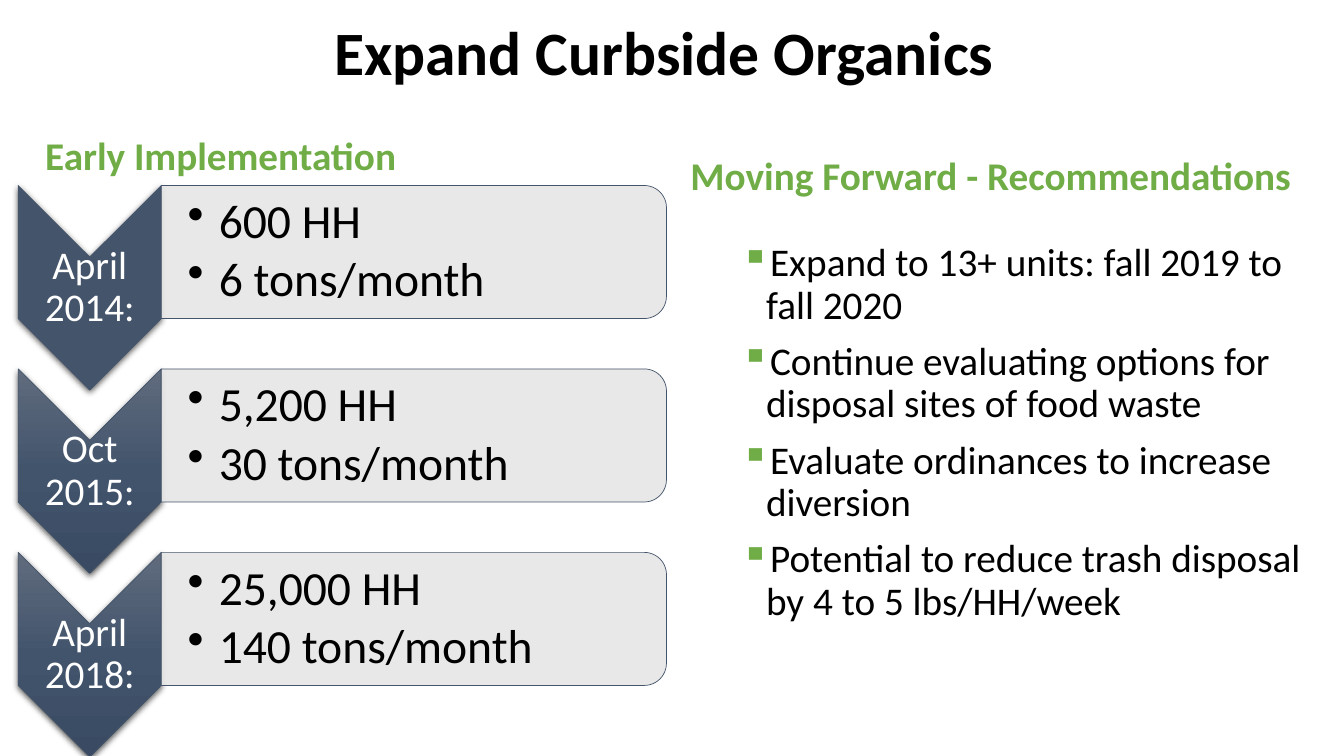
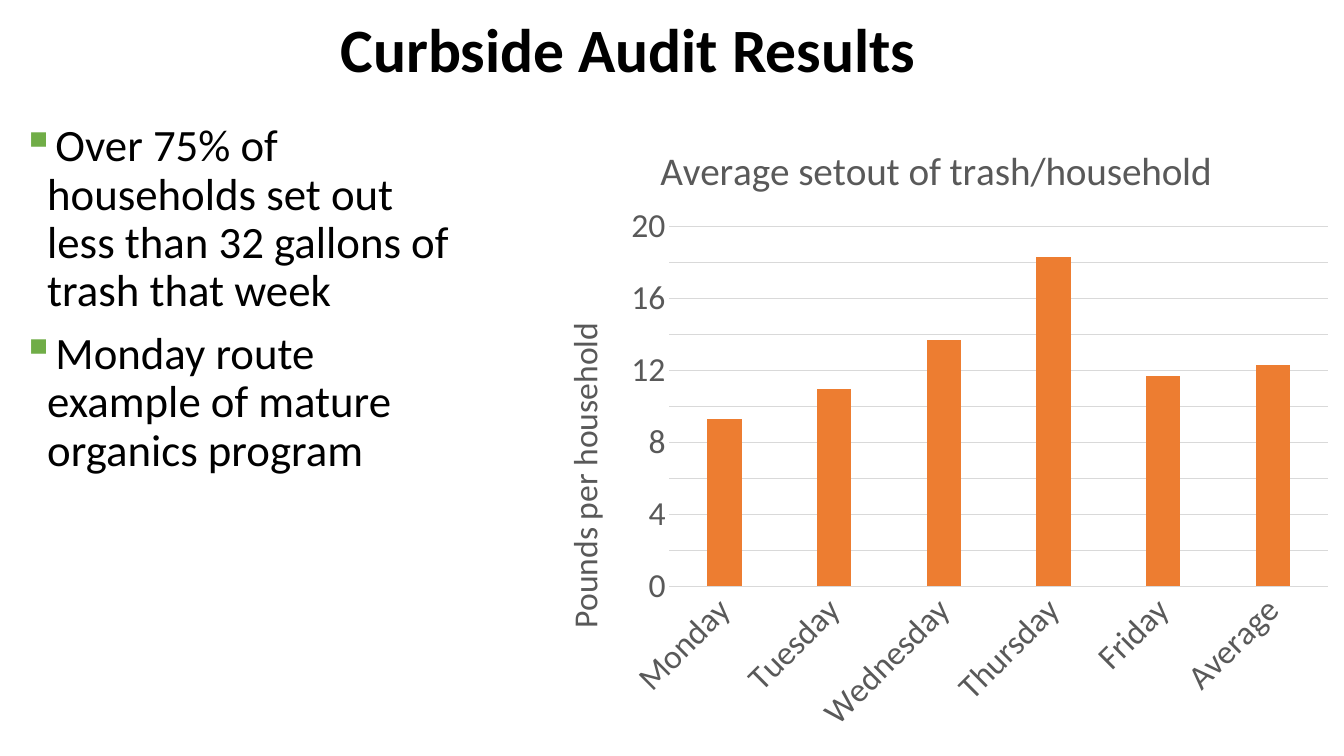
import pptx
import pptx.chart.data
import pptx.dml.color
import pptx.enum.chart
import pptx.enum.shapes
import pptx.enum.text
import pptx.oxml
import pptx.oxml.ns
import pptx.util

PX = 9144
FONT = "Calibri"
RGB = pptx.dml.color.RGBColor
BLACK = RGB(0x00, 0x00, 0x00)
WHITE = RGB(0xFF, 0xFF, 0xFF)
GREEN = RGB(0x70, 0xAD, 0x47)
SLATE = RGB(0x44, 0x54, 0x6A)
SILVER = RGB(0xE7, 0xE6, 0xE6)
GREY = RGB(0x59, 0x59, 0x59)
RULE = RGB(0xD9, 0xD9, 0xD9)
ORANGE = RGB(0xED, 0x7D, 0x31)
SLATE_BLEND = ((0, RGB(0x60, 0x6B, 0x7D)), (50, RGB(0x42, 0x54, 0x6C)),
               (100, RGB(0x39, 0x4A, 0x62)))

ALIGN = pptx.enum.text.PP_ALIGN
ANCHOR = pptx.enum.text.MSO_ANCHOR
SHAPE = pptx.enum.shapes.MSO_SHAPE
CHART = pptx.enum.chart
INSETS = ("margin_left", "margin_top", "margin_right", "margin_bottom")

TITLE = {"size": 44, "bold": True, "color": BLACK}
HEADING = {"size": 28, "bold": True, "color": GREEN}
CENTRED = {"alignment": ALIGN.CENTER, "line_spacing": 0.9}
LISTED = {"line_spacing": 0.9, "space_before": pptx.util.Pt(10)}
STEP_LISTED = {"line_spacing": 0.9, "space_after": pptx.util.Pt(5)}


def px(n):
    return pptx.util.Emu(int(n * PX))


def xml(text):
    return pptx.oxml.parse_xml(text)


def ns(*prefixes):
    return pptx.oxml.ns.nsdecls(*prefixes)


def assign(obj, values):
    for name, value in values.items():
        setattr(obj, name, value)


def style_font(font, size, color, bold=False):
    assign(font, {"name": FONT, "size": pptx.util.Pt(size), "bold": bold})
    font.color.rgb = color


def add_bullet(p, char, indent, color):
    pPr = p._p.get_or_add_pPr()
    assign_indent = {"marL": px(indent), "indent": -px(indent)}
    for name, value in assign_indent.items():
        pPr.set(name, str(int(value)))
    pPr.append(xml(f'<a:buClr {ns("a")}><a:srgbClr val="{color}"/></a:buClr>'))
    pPr.append(xml(f'<a:buChar {ns("a")} char="{char}"/>'))


def add_text(s, box, lines, font, para=None, anchor=ANCHOR.TOP,
             insets=(10, 5, 10, 5), bullet=None):
    tf = s.shapes.add_textbox(*map(px, box)).text_frame
    assign(tf, {"word_wrap": True, "vertical_anchor": anchor})
    assign(tf, dict(zip(INSETS, map(px, insets))))
    for i, line in enumerate(lines):
        p = tf.paragraphs[0] if i == 0 else tf.add_paragraph()
        assign(p, para or {})
        r = p.add_run()
        r.text = line
        style_font(r.font, **font)
        if bullet:
            add_bullet(p, *bullet)


def add_title(s, box, text):
    add_text(s, box, [text], TITLE, CENTRED, ANCHOR.MIDDLE)


def add_list(s, box, lines, size):
    add_text(s, box, lines, {"size": size, "color": BLACK}, LISTED,
             bullet=("▪", 25, GREEN))


def add_turned(s, kind, box, fill):
    x, y, w, h = box
    sp = s.shapes.add_shape(kind, px(x + (w - h) / 2), px(y + (h - w) / 2),
                            px(h), px(w))
    sp.rotation = 90
    sp.shadow.inherit = False
    sp.fill.solid()
    sp.fill.fore_color.rgb = fill
    sp.line.color.rgb = SLATE
    sp.line.width = pptx.util.Pt(0.5)
    return sp


def set_gradient(sp, stops):
    gs = "".join(f'<a:gs pos="{pos * 1000}"><a:srgbClr val="{color}"/></a:gs>'
                 for pos, color in stops)
    solid = sp._element.spPr.find(pptx.oxml.ns.qn("a:solidFill"))
    solid.getparent().replace(solid, xml(
        f'<a:gradFill {ns("a")} rotWithShape="0"><a:gsLst>{gs}</a:gsLst>'
        '<a:lin ang="5400000" scaled="0"/></a:gradFill>'))


def set_shadow(sp):
    sp._element.spPr.find(pptx.oxml.ns.qn("a:effectLst")).append(xml(
        f'<a:outerShdw {ns("a")} blurRad="57150" dist="19050" dir="5400000" '
        'algn="ctr" rotWithShape="0"><a:srgbClr val="000000">'
        '<a:alpha val="63000"/></a:srgbClr></a:outerShdw>'))


def add_step(s, box, date, facts, blended):
    x, y, w, h = box
    arrow_w, panel_h = 142, 132
    chevron = add_turned(s, SHAPE.CHEVRON, (x, y, arrow_w, h), SLATE)
    if blended:
        set_gradient(chevron, SLATE_BLEND)
    set_shadow(chevron)
    add_text(s, (x, y + 71, arrow_w, 61), [date], {"size": 28, "color": WHITE},
             CENTRED, ANCHOR.MIDDLE, (2, 2, 2, 2))
    panel_box = (x + arrow_w, y, w - arrow_w, panel_h)
    panel = add_turned(s, SHAPE.ROUND_2_SAME_RECTANGLE, panel_box, SILVER)
    color = panel.fill._xPr.find(".//" + pptx.oxml.ns.qn("a:srgbClr"))
    color.append(xml(f'<a:alpha {ns("a")} val="90000"/>'))
    add_text(s, panel_box, facts, {"size": 34, "color": BLACK}, STEP_LISTED,
             ANCHOR.MIDDLE, (26, 2, 2, 2), ("•", 31, BLACK))


def add_timeline(s, box, steps):
    x, y, w, h = box
    for i, (date, facts) in enumerate(steps):
        add_step(s, (x, y + 182 * i, w, h), date, facts, i > 0)


def set_layout(element, place, inner=False):
    for old in element.findall(pptx.oxml.ns.qn("c:layout")):
        element.remove(old)
    target = '<c:layoutTarget val="inner"/>' if inner else ""
    modes = "".join(f'<c:{k}Mode val="edge"/>' for k in "xy")
    values = "".join(f'<c:{k} val="{v}"/>' for k, v in zip("xywh", place))
    layout = xml(f'<c:layout {ns("c")}><c:manualLayout>{target}{modes}{values}'
                 '</c:manualLayout></c:layout>')
    text = element.find(pptx.oxml.ns.qn("c:tx"))
    if text is None:
        element.insert(0, layout)
    else:
        text.addnext(layout)


def add_chart_title(owner, text, size, place):
    title = owner.chart_title if hasattr(owner, "chart_title") else owner.axis_title
    p = title.text_frame.paragraphs[0]
    r = p.add_run()
    r.text = text
    style_font(r.font, size, GREY)
    set_layout(title._element, place)


def add_setout_chart(s, box, cats, vals):
    data = pptx.chart.data.CategoryChartData()
    data.categories = cats
    data.add_series("Series 1", vals)
    chart = s.shapes.add_chart(CHART.XL_CHART_TYPE.COLUMN_CLUSTERED,
                               *map(px, box), data).chart
    chart.has_legend = False
    style_font(chart.font, 24, GREY)
    add_chart_title(chart, "Average setout of trash/household", 28, (0.15, 0.05))
    plot = chart.plots[0]
    assign(plot, {"gap_width": 219, "overlap": -27, "vary_by_categories": False})
    fill = plot.series[0].format.fill
    fill.solid()
    fill.fore_color.rgb = ORANGE
    for axis in (chart.category_axis, chart.value_axis):
        assign(axis, {"major_tick_mark": CHART.XL_TICK_MARK.NONE,
                      "minor_tick_mark": CHART.XL_TICK_MARK.NONE})
        style_font(axis.tick_labels.font, 24, GREY)
    cat, val = chart.category_axis, chart.value_axis
    cat._element.txPr.bodyPr.set("rot", "-2700000")
    assign(val, {"minimum_scale": 0, "maximum_scale": 20, "major_unit": 2})
    assign(val.tick_labels, {"number_format": "0", "number_format_is_linked": False})
    val.format.line.fill.background()
    for line in (cat.format.line, val.major_gridlines.format.line):
        line.color.rgb = RULE
        line.width = pptx.util.Pt(0.75)
    add_chart_title(val, "Pounds per household", 24, (0.03, 0.33))
    val.axis_title.text_frame._txBody.bodyPr.set("rot", "-5400000")
    plot_area = chart._chartSpace.chart.plotArea
    set_layout(plot_area, (0.17, 0.19, 0.81, 0.56), inner=True)


def build_organics(s):
    add_title(s, (84, 0, 1150, 111), "Expand Curbside Organics")
    add_text(s, (35, 125, 571, 57), ["Early Implementation"], HEADING)
    add_text(s, (675, 145, 630, 57), ["Moving Forward - Recommendations"], HEADING)
    add_list(s, (725, 236, 609, 514), [
        "Expand to 13+ units: fall 2019 to fall 2020",
        "Continue evaluating options for disposal sites of food waste",
        "Evaluate ordinances to increase diversion",
        "Potential to reduce trash disposal by 4 to 5 lbs/HH/week"], 28)
    add_timeline(s, (18, 184, 643, 203), [
        ("April 2014:", ["600 HH", "6 tons/month"]),
        ("Oct 2015:", ["5,200 HH", "30 tons/month"]),
        ("April 2018:", ["25,000 HH", "140 tons/month"])])


def build_audit(s):
    add_title(s, (13, 0, 1221, 104), "Curbside Audit Results")
    add_setout_chart(
        s, (527, 104, 806, 637),
        ["Monday", "Tuesday", "Wednesday", "Thursday", "Friday", "Average"],
        [9.3, 11, 13.7, 18.3, 11.7, 12.3])
    add_list(s, (12, 117, 447, 610), [
        "Over 75% of households set out less than 32 gallons of trash that week",
        "Monday route example of mature organics program"], 32)


def main():
    prs = pptx.Presentation()
    assign(prs, {"slide_width": px(1333), "slide_height": px(750)})
    for build in (build_organics, build_audit):
        build(prs.slides.add_slide(prs.slide_layouts[6]))
    prs.save("out.pptx")


if __name__ == "__main__":
    main()
